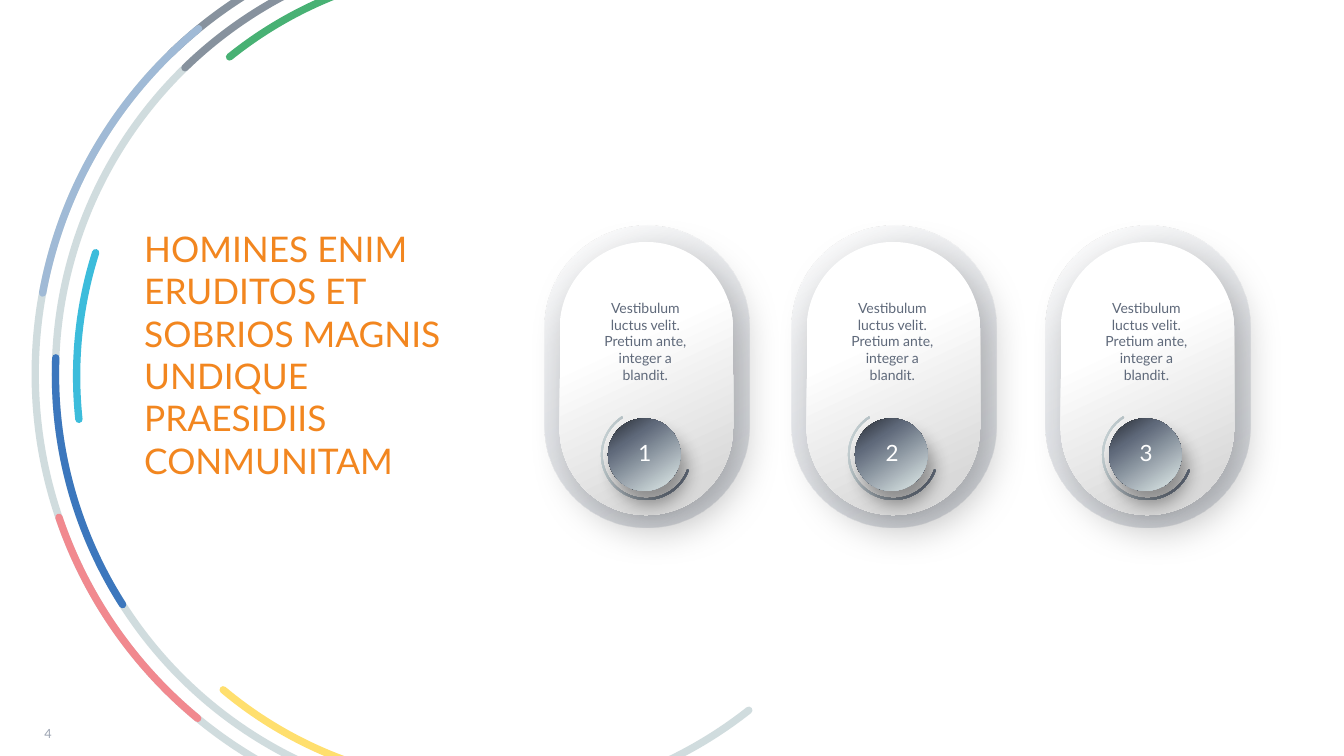
from lxml import etree
from pptx import Presentation
from pptx import util as u
from pptx.dml import color
from pptx.enum import shapes, text
from pptx.oxml import ns

SCALE = 9144  # EMU per px, 100 px to the inch
COLORS = {
    "mist": "A8BEC1", "slate": "5F697A", "coral": "F1898F", "blue": "3C77BD",
    "green": "48B174", "cyan": "3CBCDB", "sky": "A0BAD6", "yellow": "FFDF6E",
    "orange": "F2861F", "white": "FFFFFF", "silver": "D9D9D9", "steel": "737E92",
    "fog": "CAD5D7", "black": "000000", "number": "9CA4B2",
}


def add_shape(parent, kind, bounds, adjustments=(), gradient=None, shadow=None):
    """Gradient: stops, angle, turns with shape. Shadow: opacity, blur, distance."""
    shape = parent.add_shape(kind, *(v * SCALE for v in bounds))
    shape.shadow.inherit = False
    shape.line.fill.background()
    for index, value in enumerate(adjustments):
        shape.adjustments[index] = value
    properties = shape._element.spPr

    def add_color(owner, name, opacity):
        node = etree.SubElement(owner, ns.qn("a:srgbClr"), val=COLORS[name])
        if opacity < 100:
            etree.SubElement(node, ns.qn("a:alpha"), val=str(opacity * 1000))

    if gradient:
        stops, angle, turns = gradient
        shape.fill.gradient()
        fill = properties.find(ns.qn("a:gradFill"))
        fill.clear()
        fill.set("rotWithShape", str(turns))
        stop_list = etree.SubElement(fill, ns.qn("a:gsLst"))
        for position, name, opacity in stops:
            stop = etree.SubElement(stop_list, ns.qn("a:gs"), pos=str(position * 1000))
            add_color(stop, name, opacity)
        etree.SubElement(fill, ns.qn("a:lin"), ang=str(angle * 60000), scaled="0")
    else:
        shape.fill.background()
    if shadow:
        opacity, blur, distance, angle = shadow
        outer = etree.SubElement(
            properties.find(ns.qn("a:effectLst")), ns.qn("a:outerShdw"),
            blurRad=str(u.Pt(blur)), dist=str(u.Pt(distance)),
            dir=str(angle * 60000), algn="ctr", rotWithShape="0")
        add_color(outer, "black", opacity)
    return shape


def add_text(parent, bounds, words, size, name, align, frame_format):
    box = parent.add_textbox(*(v * SCALE for v in bounds))
    for key, value in {"word_wrap": True, **frame_format}.items():
        setattr(box.text_frame, key, value)
    para = box.text_frame.paragraphs[0]
    para.alignment = align
    span = para.add_run()
    span.text = words
    for key, value in {"name": "Lato", "size": u.Pt(size)}.items():
        setattr(span.font, key, value)
    span.font.color.rgb = color.RGBColor.from_string(COLORS[name])


deck = Presentation()
deck.slide_width, deck.slide_height = 1333 * SCALE, 750 * SCALE
page = deck.slides.add_slide(deck.slide_layouts[6])
SHAPE, ALIGN, ANCHOR = shapes.MSO_SHAPE, text.PP_ALIGN, text.MSO_ANCHOR

# Concentric arcs: ring, start, end, colour, opacity
RINGS = {"outer": (35, -72, 886, 886), "middle": (55, -53, 849, 849),
         "inner": (76, -33, 812, 812)}
ARCS = [
    ("outer", 146.11, 71.47, "mist", 52),
    ("outer", 146.16, 188.53, "slate", 63),
    ("outer", 11.24, 30.29, "coral", 100),
    ("middle", 146.11, 76.99, "mist", 52),
    ("middle", 146.16, 188.53, "slate", 63),
    ("middle", 214.66, 19.52, "blue", 100),
    ("inner", 154.21, 185.27, "green", 100),
    ("inner", 205.48, 3.65, "cyan", 100),
    ("outer", 185.62, 209.74, "sky", 100),
    ("inner", 30.04, 50.98, "yellow", 100),
]
for ring, start, end, name, opacity in ARCS:
    arc = add_shape(page.shapes, SHAPE.ARC, RINGS[ring], (start, end))
    arc._element.spPr.find(ns.qn("a:xfrm")).set("flipH", "1")
    arc.line.width = u.Pt(5.25)
    arc.line.color.rgb = color.RGBColor.from_string(COLORS[name])
    line = arc._element.spPr.find(ns.qn("a:ln"))
    line.set("cap", "rnd")
    if opacity < 100:
        etree.SubElement(line.find(".//" + ns.qn("a:srgbClr")), ns.qn("a:alpha"),
                         val=str(opacity * 1000))

# Title
add_text(page.shapes, (143, 220, 352, 263),
         "HOMINES ENIM ERUDITOS ET SOBRIOS MAGNIS UNDIQUE PRAESIDIIS CONMUNITAM",
         25.2, "orange", ALIGN.LEFT,
         {"vertical_anchor": ANCHOR.MIDDLE, "margin_left": 0, "margin_right": 0})

# Numbered cards
RIM = [(3, "white", 45), (95, "steel", 26)]
FACE = [(36, "white", 100), (87, "silver", 100)]
SWEEP = [(11, "fog", 100), (89, "slate", 100)]
BALL = [(0, "black", 100), (35, "slate", 100), (77, "fog", 100)]
for number, left in enumerate((540, 785, 1037), start=1):
    card = page.shapes.add_group_shape().shapes
    add_shape(card, SHAPE.ROUNDED_RECTANGLE, (left, 224, 203, 299), (0.5,), (RIM, 60, 1))
    add_shape(card, SHAPE.ROUNDED_RECTANGLE, (left + 15, 240, 172, 271), (0.5,),
              (FACE, 65, 1), (26, 28.6, 11.8, 55))
    sweep = add_shape(card, SHAPE.BLOCK_ARC, (left + 56, 406, 90, 90),
                      (82.42, 212.99, 0.02), (SWEEP, 0, 1))
    sweep.rotation = 195
    sweep._element.spPr.find(ns.qn("a:xfrm")).set("flipH", "1")
    ball = add_shape(card, SHAPE.OVAL, (left + 63, 415, 72, 72), (),
                     (BALL, 56, 0), (34, 13.2, 11, 66))
    ball.rotation = 210
    add_text(card, (left + 82, 430, 34, 37), str(number), 16, "white", ALIGN.RIGHT,
             {"vertical_anchor": ANCHOR.MIDDLE, "word_wrap": False,
              "auto_size": text.MSO_AUTO_SIZE.SHAPE_TO_FIT_TEXT})
    add_text(card, (left + 44, 292, 112, 94),
             "Vestibulum luctus velit. Pretium ante, integer a blandit.",
             10, "slate", ALIGN.CENTER,
             {"auto_size": text.MSO_AUTO_SIZE.SHAPE_TO_FIT_TEXT})

# Page number
add_text(page.shapes, (44, 695, 311, 40), "4", 9, "number", ALIGN.LEFT,
         {"vertical_anchor": ANCHOR.BOTTOM, "margin_left": 0, "margin_top": 0,
          "margin_right": 0, "margin_bottom": 0})

deck.save("out.pptx")
